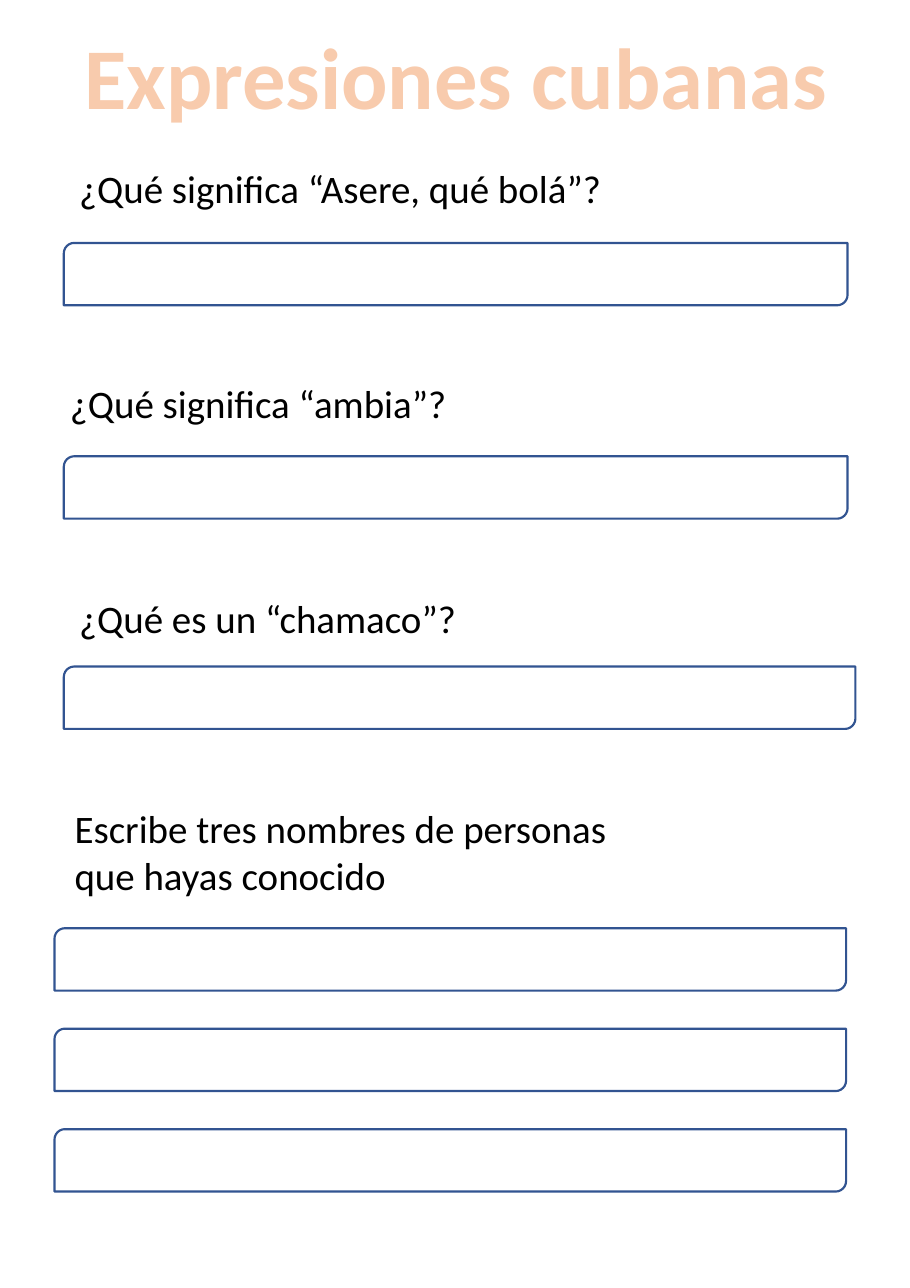
from lxml import etree
from pptx import Presentation
from pptx import util as u
from pptx.dml.color import RGBColor
from pptx.enum import shapes, text
from pptx.oxml.ns import qn

WIDTH, HEIGHT = u.Inches(5.84), u.Inches(8.27)
FONT = "Calibri"
INK, PEACH, ORANGE, BLUE = "000000", "F8CBAD", "ED7D31", "325491"
LEFT, OUTER_LEFT = 7.02, 5.99
NARROW, WIDE = 86.13, 86.99
ROW = 4.84
QUESTION_TOP, QUESTION_STEP = 12.21, 16.69
NAME_TOP, NAME_STEP, NAME_COUNT = 72.07, 7.8, 3

QUESTIONS = [
    ("¿Qué significa “Asere, qué bolá”?", LEFT, 61.13, 18.86, NARROW),
    ("¿Qué significa “ambia”?", OUTER_LEFT, 45.38, 35.43, NARROW),
    ("¿Qué es un “chamaco”?", LEFT, 45.38, 51.75, WIDE),
]
NAMES_PROMPT = ["Escribe tres nombres de personas", "que hayas conocido"]


def colour(code):
    return RGBColor.from_string(code)


def area(left, top, width, height):
    return [int(share * side / 100) for share, side in
            ((left, WIDTH), (top, HEIGHT), (width, WIDTH), (height, HEIGHT))]


def write(box, lines, size, code, bold=False, align=text.PP_ALIGN.LEFT):
    frame = box.text_frame
    frame.word_wrap = False
    frame.auto_size = text.MSO_AUTO_SIZE.SHAPE_TO_FIT_TEXT
    frame.vertical_anchor = text.MSO_ANCHOR.TOP
    for index, line in enumerate(lines):
        para = frame.add_paragraph() if index else frame.paragraphs[0]
        para.alignment = align
        para.line_spacing = 1.0
        para.space_before = u.Pt(0)
        span = para.add_run()
        span.text = line
        span.font.name = FONT
        span.font.size = u.Pt(size)
        span.font.bold = bold
        span.font.color.rgb = colour(code)


def outline_text(span, code, points):
    line = etree.Element(qn("a:ln"), w=str(u.Pt(points)))
    fill = etree.SubElement(line, qn("a:solidFill"))
    etree.SubElement(fill, qn("a:srgbClr"), val=code)
    span.font._element.insert(0, line)


def add_title(page, words):
    title = page.shapes.title
    title.left, title.top, title.width, title.height = area(LEFT, 1.21, NARROW, 9.31)
    write(title, [words], 40, PEACH, True, text.PP_ALIGN.CENTER)
    outline_text(title.text_frame.paragraphs[0].runs[0], ORANGE, 1.75)


def add_prompt(page, lines, left, top, width, height):
    box = page.shapes.add_textbox(*area(left, top, width, height))
    write(box, lines, 18, INK)


def add_answer(page, left, top, width):
    box = page.shapes.add_shape(
        shapes.MSO_SHAPE.ROUND_2_DIAG_RECTANGLE, *area(left, top, width, ROW))
    box.shadow.inherit = False
    box.fill.background()
    box.line.color.rgb = colour(BLUE)
    box.line.width = u.Pt(1)


def main():
    deck = Presentation()
    deck.slide_width, deck.slide_height = WIDTH, HEIGHT
    page = deck.slides.add_slide(deck.slide_layouts[5])
    add_title(page, "Expresiones cubanas")
    for index, (question, left, width, answer_top, answer_width) in enumerate(QUESTIONS):
        add_prompt(page, [question], left, QUESTION_TOP + index * QUESTION_STEP, width, ROW)
        add_answer(page, LEFT, answer_top, answer_width)
    add_prompt(page, NAMES_PROMPT, 6.51, 61.91, 63.53, 8.59)
    for index in range(NAME_COUNT):
        add_answer(page, OUTER_LEFT, NAME_TOP + index * NAME_STEP, WIDE)
    deck.save("out.pptx")


if __name__ == "__main__":
    main()
